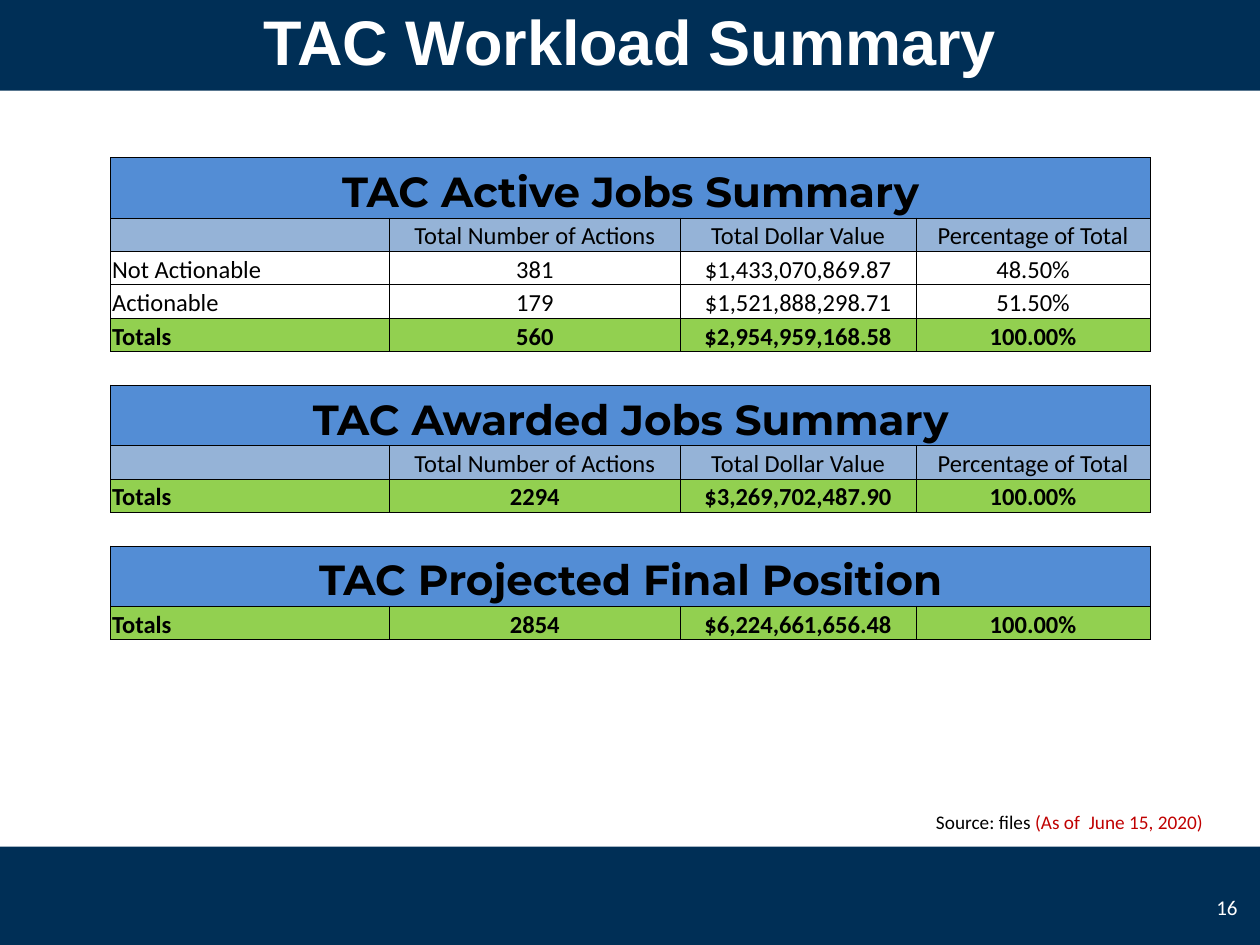
from lxml import etree
from pptx import Presentation
from pptx.dml.color import RGBColor
from pptx.enum.shapes import MSO_SHAPE
from pptx.enum.text import MSO_ANCHOR, PP_ALIGN
from pptx.oxml.ns import qn
from pptx.util import Inches, Pt

RECT = MSO_SHAPE.RECTANGLE
MID, LOW, TOP = MSO_ANCHOR.MIDDLE, MSO_ANCHOR.BOTTOM, MSO_ANCHOR.TOP
LEFT, MIDDLE, RIGHT = PP_ALIGN.LEFT, PP_ALIGN.CENTER, PP_ALIGN.RIGHT
NAVY, WHITE, BLACK, RED = "002F56", "FFFFFF", "000000", "C00000"

COLS = [2.21, 2.31, 1.87, 1.86]
HEAD = ["", "Total Number of Actions", "Total Dollar Value", "Percentage of Total"]
ROWS = [
    ("title", ["TAC Active Jobs Summary"]),
    ("head", HEAD),
    ("body", ["Not Actionable", "381", "$1,433,070,869.87", "48.50%"]),
    ("body", ["Actionable", "179", "$1,521,888,298.71", "51.50%"]),
    ("total", ["Totals", "560", "$2,954,959,168.58", "100.00%"]),
    ("gap", []),
    ("title", ["TAC Awarded Jobs Summary"]),
    ("head", HEAD),
    ("total", ["Totals", "2294", "$3,269,702,487.90", "100.00%"]),
    ("gap", []),
    ("title", ["TAC Projected Final Position"]),
    ("total", ["Totals", "2854", "$6,224,661,656.48", "100.00%"]),
]
FILLS = {"title": "538DD5", "head": "95B3D7", "total": "92D050"}
PLAIN = {"name": "Calibri", "size": Pt(14), "bold": False}
FONTS = {
    "title": {"name": "Montserrat", "size": Pt(24), "bold": True},
    "total": {**PLAIN, "bold": True},
}
INSETS = {
    "margin_left": Inches(0.01), "margin_right": Inches(0.01),
    "margin_top": Inches(0.01), "margin_bottom": 0, "vertical_anchor": LOW,
}


def color(code):
    """Turn a hex string into a colour."""
    return RGBColor.from_string(code)


def apply(item, values):
    """Set each named attribute on an item."""
    for name, value in values.items():
        setattr(item, name, value)


def place(shape, box):
    """Move a shape to a box given in inches."""
    names = ("left", "top", "width", "height")
    apply(shape, dict(zip(names, map(Inches, box))))


def write(para, text, font, code, align):
    """Add one formatted run to a paragraph."""
    para.alignment = align
    run = para.add_run()
    run.text = text
    apply(run.font, font)
    run.font.color.rgb = color(code)


def band(slide, box):
    """Draw a navy band behind all other parts."""
    shape = slide.shapes.add_shape(RECT, *map(Inches, box))
    shape.shadow.inherit = False
    shape.fill.solid()
    shape.fill.fore_color.rgb = color(NAVY)
    shape.line.fill.background()
    slide.shapes._spTree.insert(2, shape._element)


def header(slide, box):
    """Fill the title placeholder over its band."""
    band(slide, box)
    title = slide.shapes.title
    place(title, box)
    apply(title.text_frame, {"vertical_anchor": MID, "word_wrap": True})
    font = {"name": "Arial", "size": Pt(36), "bold": True}
    write(title.text_frame.paragraphs[0], "TAC Workload Summary", font, WHITE, MIDDLE)


def label(slide, box, parts, size, align, anchor):
    """Add a line of text made of coloured parts."""
    frame = slide.shapes.add_textbox(*map(Inches, box)).text_frame
    apply(frame, {"word_wrap": True, "vertical_anchor": anchor})
    for text, code in parts:
        font = {"name": "Calibri", "size": Pt(size)}
        write(frame.paragraphs[0], text, font, code, align)


def border(cell, sides):
    """Rule the named sides of a cell and clear the others."""
    props = cell._tc.get_or_add_tcPr()
    for side in "LRTB":
        line = etree.SubElement(props, qn(f"a:ln{side}"), w=str(Pt(0.5)))
        if side in sides:
            fill = etree.SubElement(line, qn("a:solidFill"))
            etree.SubElement(fill, qn("a:srgbClr"), val=BLACK)
        else:
            etree.SubElement(line, qn("a:noFill"))


def style(cell, kind, text, align):
    """Format one cell by its kind of row."""
    border(cell, "TB" if kind == "gap" else "LRTB")
    apply(cell, INSETS)
    if kind in FILLS:
        cell.fill.solid()
        cell.fill.fore_color.rgb = color(FILLS[kind])
    else:
        cell.fill.background()
    para = cell.text_frame.paragraphs[0]
    if text:
        write(para, text, FONTS.get(kind, PLAIN), BLACK, align)
    else:
        para._p.get_or_add_endParaRPr().set("sz", "1400")


def summary(slide, box):
    """Build the table of three stacked summaries."""
    table = slide.shapes.add_table(len(ROWS), len(COLS), *map(Inches, box)).table
    apply(table, {"first_row": False, "horz_banding": False})
    for col, width in zip(table.columns, COLS):
        col.width = Inches(width)
    tall = 0.48
    count = sum(kind == "title" for kind, _ in ROWS)
    short = (box[3] - count * tall) / (len(ROWS) - count)
    for row, (kind, texts) in enumerate(ROWS):
        table.rows[row].height = Inches(tall if kind == "title" else short)
        for col in range(len(COLS)):
            text = texts[col] if col < len(texts) else ""
            align = LEFT if col == 0 and kind != "title" else MIDDLE
            style(table.cell(row, col), kind, text, align)
        if kind == "title":
            table.cell(row, 0).merge(table.cell(row, len(COLS) - 1))


def main():
    """Build and save the slide."""
    deck = Presentation()
    wide, high = 10, 7.5
    apply(deck, {"slide_width": Inches(wide), "slide_height": Inches(high)})
    slide = deck.slides.add_slide(deck.slide_layouts[5])
    header(slide, (0, -0.08, wide, 0.8))
    band(slide, (0, 6.72, wide, 0.8))
    summary(slide, (0.88, 1.25, sum(COLS), 3.83))
    source = [("Source: files ", BLACK), ("(As of  June 15, 2020)", RED)]
    label(slide, (7.33, 6.38, 2.62, 0.29), source, 11, LEFT, TOP)
    label(slide, (9.5, 7, 0.42, 0.4), [("16", WHITE)], 12, RIGHT, MID)
    deck.save("out.pptx")


if __name__ == "__main__":
    main()
